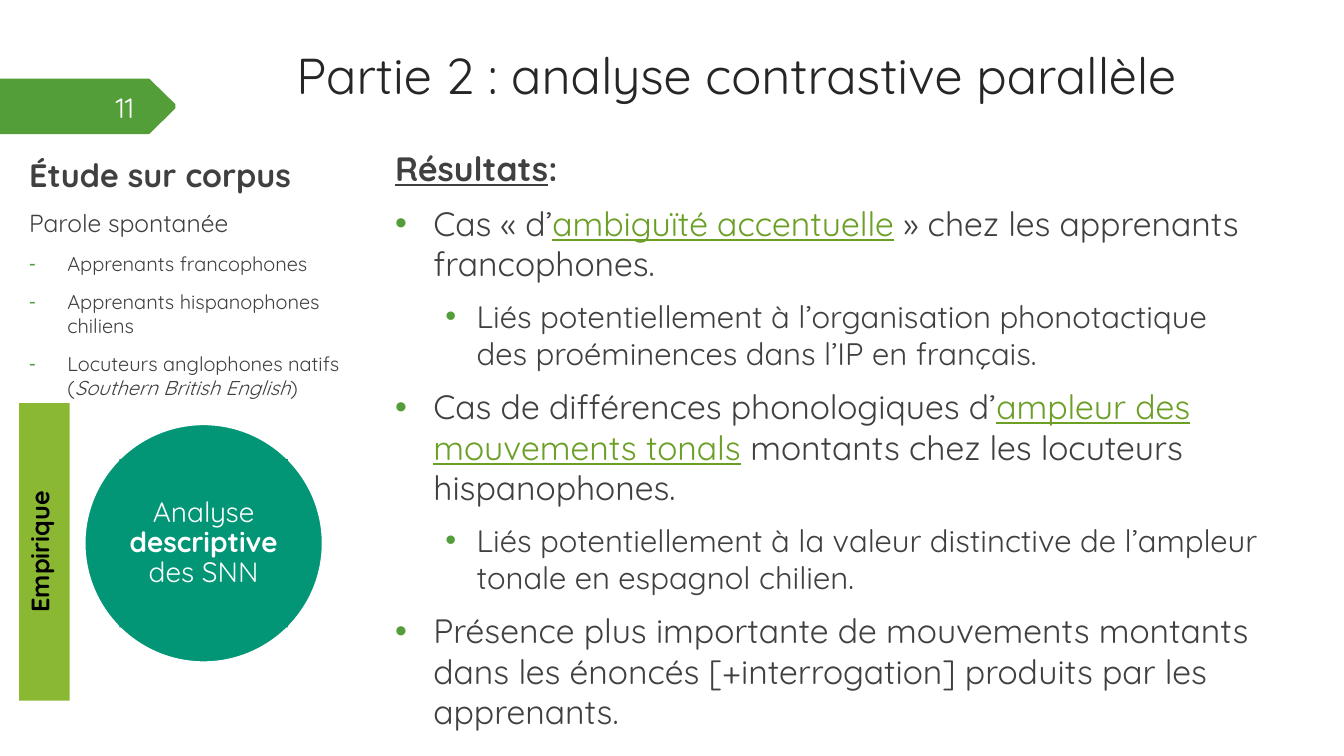
import pptx
import pptx.dml.color
import pptx.enum.shapes
import pptx.enum.text
import pptx.oxml.ns
import pptx.util
from lxml import etree

Inches = pptx.util.Inches
Align = pptx.enum.text.PP_ALIGN
Anchor = pptx.enum.text.MSO_ANCHOR
Preset = pptx.enum.shapes.MSO_SHAPE

FONT = "Quicksand"
GREEN, LIME, TEAL, LINK = "549E39", "8AB833", "029676", "6B9F25"
DARK, GREY, WHITE, BLACK = "262626", "404040", "FFFFFF", "000000"


def color(value):
    return pptx.dml.color.RGBColor.from_string(value)


def paint(shape, fill, line=None):
    shape.shadow.inherit = False
    shape.fill.solid()
    shape.fill.fore_color.rgb = color(fill)
    if line:
        shape.line.color.rgb = color(line)
        shape.line.width = pptx.util.Pt(1.25)
    else:
        shape.line.fill.background()


def add_bullet(paragraph, mark, indent, hanging):
    properties = paragraph._p.get_or_add_pPr()
    properties.set("marL", str(Inches(indent)))
    properties.set("indent", str(-Inches(hanging)))
    qn = pptx.oxml.ns.qn
    bullet_color = etree.SubElement(properties, qn("a:buClr"))
    etree.SubElement(bullet_color, qn("a:srgbClr")).set("val", GREEN)
    etree.SubElement(properties, qn("a:buFont")).set("typeface", "Arial")
    etree.SubElement(properties, qn("a:buChar")).set("char", mark)


def write(frame, runs, size, fill=GREY, align=Align.LEFT, before=0, after=0,
          spacing=None, bullet=None, indent=0.38, hanging=0.38, level=0):
    """Add one paragraph; each run is a text or a (text, format) pair."""
    paragraph = frame.paragraphs[0]
    if paragraph.runs:
        paragraph = frame.add_paragraph()
    paragraph.alignment = align
    paragraph.level = level
    paragraph.space_before = pptx.util.Pt(before)
    paragraph.space_after = pptx.util.Pt(after)
    if spacing:
        paragraph.line_spacing = spacing
    if bullet:
        add_bullet(paragraph, bullet, indent, hanging)
    for item in runs:
        text, style = (item, {}) if isinstance(item, str) else item
        run = paragraph.add_run()
        run.text = text
        font = run.font
        font.name = FONT
        font.size = pptx.util.Pt(size)
        font.color.rgb = color(style.get("fill", fill))
        font.bold = style.get("bold", False)
        font.italic = style.get("italic", False)
        font.underline = style.get("underline", False)


def text_box(slide, left, top, width, height, anchor=Anchor.TOP):
    box = slide.shapes.add_textbox(Inches(left), Inches(top), Inches(width), Inches(height))
    box.text_frame.word_wrap = True
    box.text_frame.vertical_anchor = anchor
    return box.text_frame


def add_shape(slide, preset, left, top, width, height, fill, line=None):
    shape = slide.shapes.add_shape(
        preset, Inches(left), Inches(top), Inches(width), Inches(height))
    paint(shape, fill, line)
    return shape


def add_title(slide, left, top, width, height):
    title = slide.shapes.title
    title.left, title.top = Inches(left), Inches(top)
    title.width, title.height = Inches(width), Inches(height)
    title.text_frame.vertical_anchor = Anchor.TOP
    title.text_frame.auto_size = pptx.enum.text.MSO_AUTO_SIZE.NONE
    write(title.text_frame, ["Partie 2 : analyse contrastive parallèle"], 36, DARK)


def add_page_marker(slide, left, top, width, height):
    # Arrow-ended band
    right, middle, shoulder = left + width, top + height / 2, left + width - 0.26
    builder = slide.shapes.build_freeform(Inches(left), Inches(top), scale=1.0)
    corners = [(shoulder, top), (right, middle - 0.02), (right, middle + 0.02),
               (shoulder, top + height), (left, top + height)]
    builder.add_line_segments([(Inches(x), Inches(y)) for x, y in corners], close=True)
    paint(builder.convert_to_shape(), GREEN)
    # Page number
    number = text_box(slide, left + 0.58, top + 0.08, 0.85, 0.4, Anchor.MIDDLE)
    write(number, ["11"], 20, "FEFFFF", Align.RIGHT)


def add_corpus(slide, left, top, width, height):
    frame = text_box(slide, left, top, width, height)
    write(frame, [("Étude sur corpus", {"bold": True})], 23.1, before=10)
    write(frame, ["Parole spontanée"], 17.6, before=10)
    speakers = [
        ["Apprenants francophones"],
        ["Apprenants hispanophones chiliens"],
        ["Locuteurs anglophones natifs (", ("Southern British English", {"italic": True}), ")"],
    ]
    for runs in speakers:
        write(frame, runs, 14.3, before=10, bullet="-")


def add_analysis(slide, left, top, width, height):
    # Vertical label
    label = add_shape(slide, Preset.RECTANGLE, left, top, 0.5, height, LIME)
    frame = label.text_frame
    frame.word_wrap = True
    frame.vertical_anchor = Anchor.TOP
    frame._txBody.bodyPr.set("vert", "vert270")
    write(frame, [("Empirique", {"bold": True})], 18, BLACK, Align.CENTER)
    # Circle and its text
    diameter, inner = 2.36, 1.67
    circle_left, circle_top = left + width - diameter, top + 0.21
    add_shape(slide, Preset.OVAL, circle_left, circle_top, diameter, diameter, TEAL, WHITE)
    inset = (diameter - inner) / 2
    core = add_shape(slide, Preset.RECTANGLE, circle_left + inset, circle_top + inset,
                     inner, inner, TEAL)
    frame = core.text_frame
    frame.word_wrap = True
    frame.vertical_anchor = Anchor.MIDDLE
    frame.margin_left = frame.margin_right = frame.margin_top = frame.margin_bottom = 0
    write(frame, ["Analyse ", ("descriptive", {"bold": True}), " des SNN"], 20, WHITE,
          Align.CENTER, after=7, spacing=0.9)


def add_results(slide, left, top, width, height):
    frame = text_box(slide, left, top, width, height)
    link = {"fill": LINK, "underline": True}
    write(frame, [("Résultats", {"bold": True, "underline": True}), (":", {"bold": True})],
          24.1, before=10)
    findings = [
        (0, ["Cas « d’", ("ambiguïté accentuelle", link),
             " » chez les apprenants francophones."]),
        (1, ["Liés potentiellement à l’organisation phonotactique des proéminences "
             "dans l’IP en français."]),
        (0, ["Cas de différences phonologiques d’", ("ampleur des mouvements tonals", link),
             " montants chez les locuteurs hispanophones."]),
        (1, ["Liés potentiellement à la valeur distinctive de l’ampleur tonale "
             "en espagnol chilien."]),
        (0, ["Présence plus importante de mouvements montants dans les énoncés "
             "[+interrogation] produits par les apprenants."]),
    ]
    formats = [{"size": 24.1}, {"size": 22.2, "indent": 0.81, "hanging": 0.31}]
    for level, runs in findings:
        write(frame, runs, before=10, bullet="•", level=level, **formats[level])


def main():
    presentation = pptx.Presentation()
    presentation.slide_width = Inches(13.33)
    presentation.slide_height = Inches(7.5)
    slide = presentation.slides.add_slide(presentation.slide_layouts[5])
    add_page_marker(slide, 0, 0.78, 1.74, 0.55)
    add_title(slide, 2.84, 0.39, 9.75, 0.95)
    add_analysis(slide, 0.19, 4, 3.01, 2.95)
    add_corpus(slide, 0.19, 1.49, 3.63, 2.31)
    add_results(slide, 3.82, 1.42, 8.76, 6.08)
    presentation.save("out.pptx")


if __name__ == "__main__":
    main()
